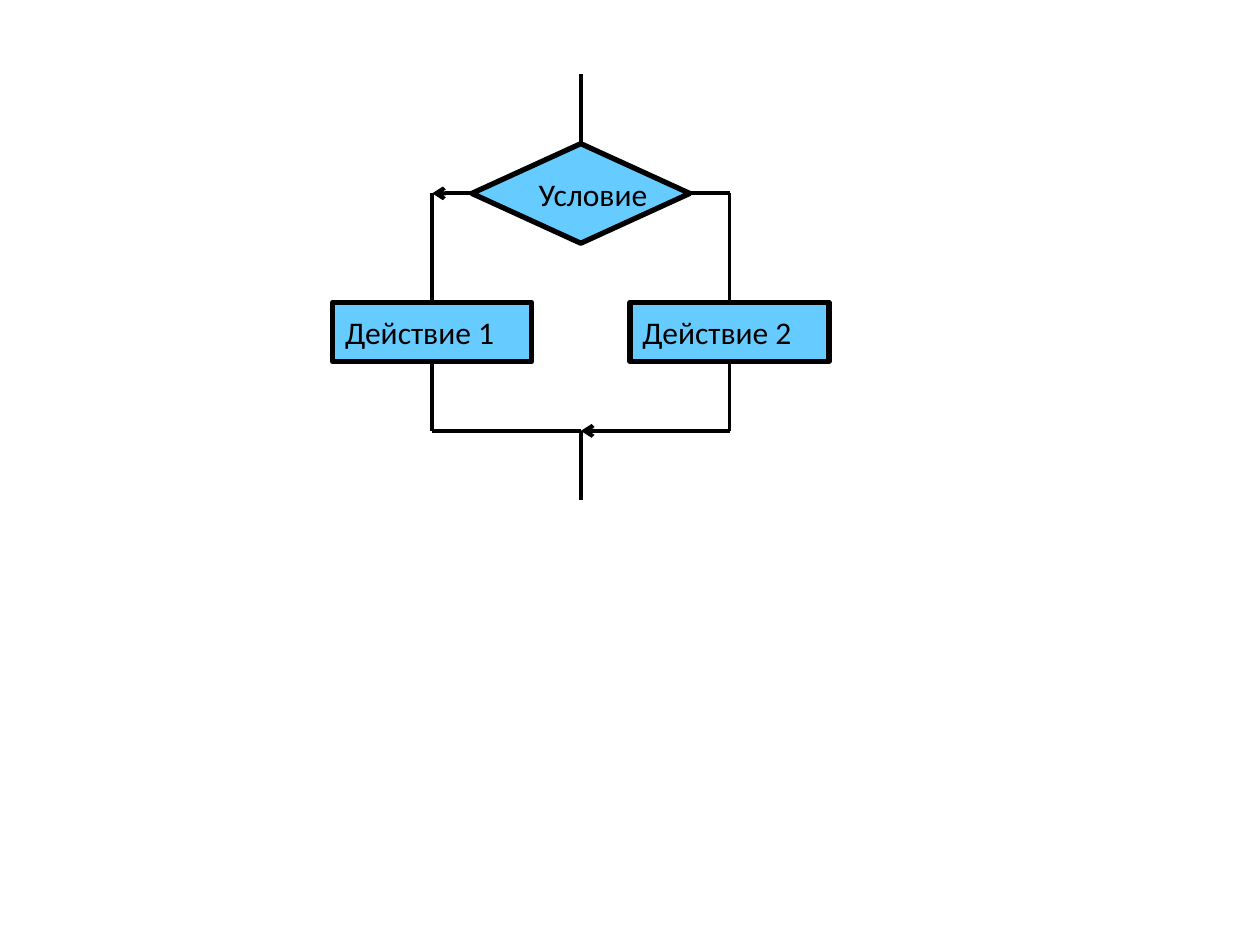
from dataclasses import dataclass
from typing import Optional

from lxml.etree import SubElement
from pptx import Presentation
from pptx.dml.color import RGBColor
from pptx.enum.shapes import MSO_CONNECTOR as Connector, MSO_SHAPE as Preset
from pptx.enum.text import MSO_ANCHOR as Anchor, PP_ALIGN as Align
from pptx.oxml.ns import qn
from pptx.shapes.autoshape import Shape
from pptx.slide import Slide
from pptx.util import Inches, Pt

BLACK = RGBColor(0x00, 0x00, 0x00)
SKY = RGBColor(0x66, 0xCC, 0xFF)

TOP, LEFT, BOTTOM, RIGHT = range(4)

AXIS = 4.61
BRANCH_OFFSET = 1.18
LEFT_BRANCH = AXIS - BRANCH_OFFSET
RIGHT_BRANCH = AXIS + BRANCH_OFFSET
ENTRY_Y = 0.59
CONDITION_Y = 1.535
ACTION_Y = 2.635
MERGE_Y = 3.42
EXIT_Y = 3.97

FRAME_FORMAT = {"word_wrap": False, "vertical_anchor": Anchor.MIDDLE}
FONT_FORMAT = {"name": "Calibri", "size": Pt(18)}


@dataclass(frozen=True)
class Block:
    text: str
    preset: Preset
    center_x: float
    center_y: float
    width: float
    height: float


@dataclass(frozen=True)
class Flow:
    start: tuple[float, float]
    end: tuple[float, float]
    source: Optional[tuple[str, int]] = None
    target: Optional[tuple[str, int]] = None
    arrow: bool = False


CONDITION = "Условие"
ACTION_1 = "Действие 1"
ACTION_2 = "Действие 2"

BLOCKS = [
    Block(ACTION_1, Preset.RECTANGLE, LEFT_BRANCH, ACTION_Y, 1.58, 0.47),
    Block(CONDITION, Preset.FLOWCHART_DECISION, AXIS, CONDITION_Y, 1.73, 0.79),
    Block(ACTION_2, Preset.RECTANGLE, RIGHT_BRANCH, ACTION_Y, 1.58, 0.47),
]

MERGE = (AXIS, MERGE_Y)
CONDITION_CENTER = (AXIS, CONDITION_Y)


def branch_flows(action: str, x: float) -> list[Flow]:
    center = (x, ACTION_Y)
    return [
        Flow((x, CONDITION_Y), center, target=(action, TOP)),
        Flow(center, (x, MERGE_Y), source=(action, BOTTOM)),
    ]


FLOWS = [
    Flow((AXIS, ENTRY_Y), CONDITION_CENTER, target=(CONDITION, TOP)),
    *branch_flows(ACTION_1, LEFT_BRANCH),
    *branch_flows(ACTION_2, RIGHT_BRANCH),
    Flow(MERGE, (AXIS, EXIT_Y)),
    Flow(CONDITION_CENTER, (RIGHT_BRANCH, CONDITION_Y), source=(CONDITION, RIGHT)),
    Flow(CONDITION_CENTER, (LEFT_BRANCH, CONDITION_Y), source=(CONDITION, LEFT), arrow=True),
    Flow(MERGE, (LEFT_BRANCH, MERGE_Y)),
    Flow((RIGHT_BRANCH, MERGE_Y), MERGE, arrow=True),
]


def apply_format(item: object, values: dict) -> None:
    for name, value in values.items():
        setattr(item, name, value)


def draw_block(page: Slide, block: Block) -> Shape:
    box = page.shapes.add_shape(
        block.preset,
        Inches(block.center_x - block.width / 2),
        Inches(block.center_y - block.height / 2),
        Inches(block.width),
        Inches(block.height),
    )
    box.shadow.inherit = False
    box.fill.solid()
    box.fill.fore_color.rgb = SKY
    box.line.color.rgb = BLACK
    box.line.width = Pt(3)
    apply_format(box.text_frame, FRAME_FORMAT)
    para = box.text_frame.paragraphs[0]
    para.alignment = Align.LEFT
    span = para.add_run()
    span.text = block.text
    apply_format(span.font, FONT_FORMAT)
    span.font.color.rgb = BLACK
    return box


def draw_flow(page: Slide, flow: Flow, boxes: dict[str, Shape]) -> None:
    ends = [Inches(value) for value in (*flow.start, *flow.end)]
    line = page.shapes.add_connector(Connector.STRAIGHT, *ends)
    if flow.source:
        name, side = flow.source
        line.begin_connect(boxes[name], side)
    if flow.target:
        name, side = flow.target
        line.end_connect(boxes[name], side)
    line.line.color.rgb = BLACK
    line.line.width = Pt(2.25)
    if flow.arrow:
        SubElement(line.line._get_or_add_ln(), qn("a:tailEnd"), type="arrow")
    SubElement(line._element.spPr, qn("a:effectLst"))


def main() -> None:
    deck = Presentation()
    apply_format(deck, {"slide_width": Inches(10), "slide_height": Inches(7.5)})
    page = deck.slides.add_slide(deck.slide_layouts[6])
    boxes = {block.text: draw_block(page, block) for block in BLOCKS}
    for flow in FLOWS:
        draw_flow(page, flow, boxes)
    deck.save("out.pptx")


if __name__ == "__main__":
    main()
